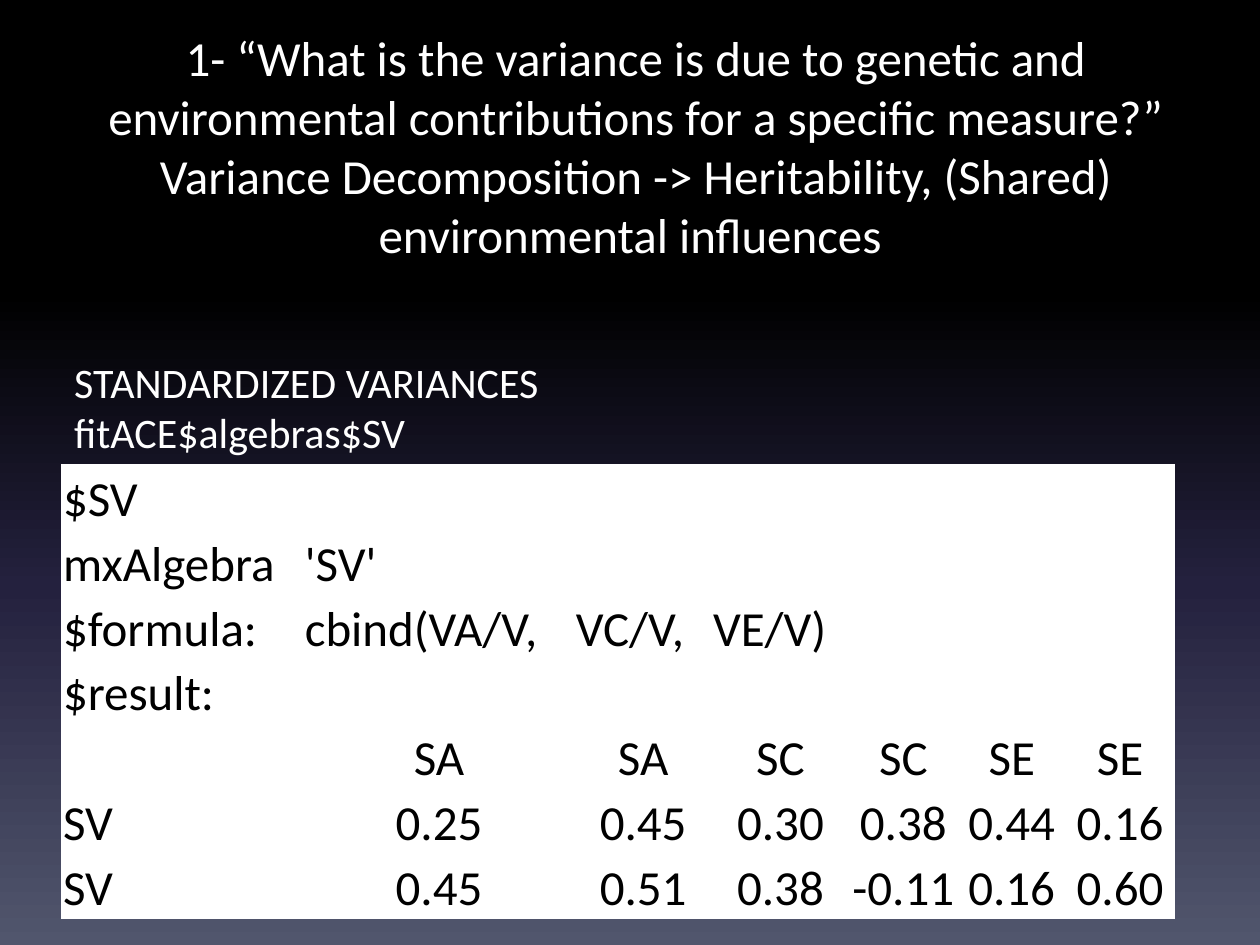
from copy import deepcopy
from pptx import Presentation
from pptx.dml.color import RGBColor
from pptx.enum.text import MSO_ANCHOR, MSO_AUTO_SIZE, PP_ALIGN
from pptx.oxml.ns import qn
from pptx.util import Inches, Pt

LEFT, CENTER = PP_ALIGN.LEFT, PP_ALIGN.CENTER
TOP, BOTTOM = MSO_ANCHOR.TOP, MSO_ANCHOR.BOTTOM
NO_FIT, GROW = MSO_AUTO_SIZE.NONE, MSO_AUTO_SIZE.SHAPE_TO_FIT_TEXT

COLORS = {"black": "000000", "white": "FFFFFF", "navy": "24213E", "slate": "51566D"}
BACKDROP = [(0, "black"), (0.31, "black"), (0.62, "navy"), (1, "slate")]

QUESTION = (
    "1- “What is the variance is due to genetic and environmental contributions "
    "for a specific measure?”\v"
    "Variance Decomposition -> Heritability, (Shared) environmental influences "
)
CAPTION = ["STANDARDIZED VARIANCES", "fitACE$algebras$SV"]
COLUMN_WIDTHS = [1.92, 2.15, 1.09, 1.09, 0.86, 0.86, 0.86]
DECLARATION = [
    ["$SV"],
    ["mxAlgebra", "'SV'"],
    ["$formula:", "cbind(VA/V,", "VC/V,", "VE/V)"],
    ["$result:"],
]
RESULT = [
    ["", "SA", "SA", "SC", "SC", "SE", "SE"],
    ["SV", "0.25", "0.45", "0.30", "0.38", "0.44", "0.16"],
    ["SV", "0.45", "0.51", "0.38", "-0.11", "0.16", "0.60"],
]


def apply_format(target, values):
    for name, value in values.items():
        setattr(target, name, value)


class SlideBuilder:
    font_name = "Calibri"

    def __init__(self, slide):
        self.slide = slide

    def color(self, name):
        return RGBColor.from_string(COLORS[name])

    def background(self, stops):
        fill = self.slide.background.fill
        fill.gradient()
        fill.gradient_angle = 270
        stop_list = self.slide.element.find(".//" + qn("a:gsLst"))
        while len(stop_list) < len(stops):
            stop_list.append(deepcopy(stop_list[0]))
        for stop, (position, color) in zip(fill.gradient_stops, stops):
            stop.position = position
            stop.color.rgb = self.color(color)

    def fill_paragraph(self, paragraph, text, size, color, **layout):
        paragraph.text = text
        apply_format(paragraph, layout)
        for run in paragraph.runs:
            apply_format(run.font, {"name": self.font_name, "size": Pt(size)})
            run.font.color.rgb = self.color(color)

    def text(self, box, lines, size, frame_format, **layout):
        frame = self.slide.shapes.add_textbox(*map(Inches, box)).text_frame
        apply_format(frame, frame_format)
        for index, line in enumerate(lines):
            paragraph = frame.add_paragraph() if index else frame.paragraphs[0]
            self.fill_paragraph(paragraph, line, size, "white", **layout)

    def table(self, box, widths, rows, centered_from):
        shape = self.slide.shapes.add_table(len(rows), len(widths), *map(Inches, box))
        table = shape.table
        apply_format(table, {"first_row": False, "horz_banding": False})
        for column, width in zip(table.columns, widths):
            column.width = Inches(width)
        margin = Inches(0.01)
        cell_format = {
            "vertical_anchor": BOTTOM,
            "margin_left": margin,
            "margin_right": margin,
            "margin_top": margin,
            "margin_bottom": 0,
        }
        for cell in table.iter_cells():
            apply_format(cell, cell_format)
            cell.fill.solid()
            cell.fill.fore_color.rgb = self.color("white")
        for r, row in enumerate(rows):
            for c, value in enumerate(row):
                alignment = CENTER if r >= centered_from and c else LEFT
                paragraph = table.cell(r, c).text_frame.paragraphs[0]
                self.fill_paragraph(paragraph, value, 28, "black", alignment=alignment)


def main():
    deck = Presentation()
    apply_format(deck, {"slide_width": Inches(10), "slide_height": Inches(7.5)})
    builder = SlideBuilder(deck.slides.add_slide(deck.slide_layouts[6]))
    builder.background(BACKDROP)
    builder.text(
        (0.23, 0.17, 9.63, 1.25), [QUESTION], 28,
        {"word_wrap": True, "auto_size": NO_FIT, "vertical_anchor": TOP},
        alignment=CENTER, space_before=Pt(5.6),
    )
    builder.table(
        (0.49, 3.69, sum(COLUMN_WIDTHS), 3.6), COLUMN_WIDTHS,
        DECLARATION + RESULT, len(DECLARATION),
    )
    builder.text(
        (0.49, 2.78, 4.37, 0.91), CAPTION, 24,
        {"word_wrap": False, "auto_size": GROW}, alignment=LEFT,
    )
    deck.save("out.pptx")


if __name__ == "__main__":
    main()
